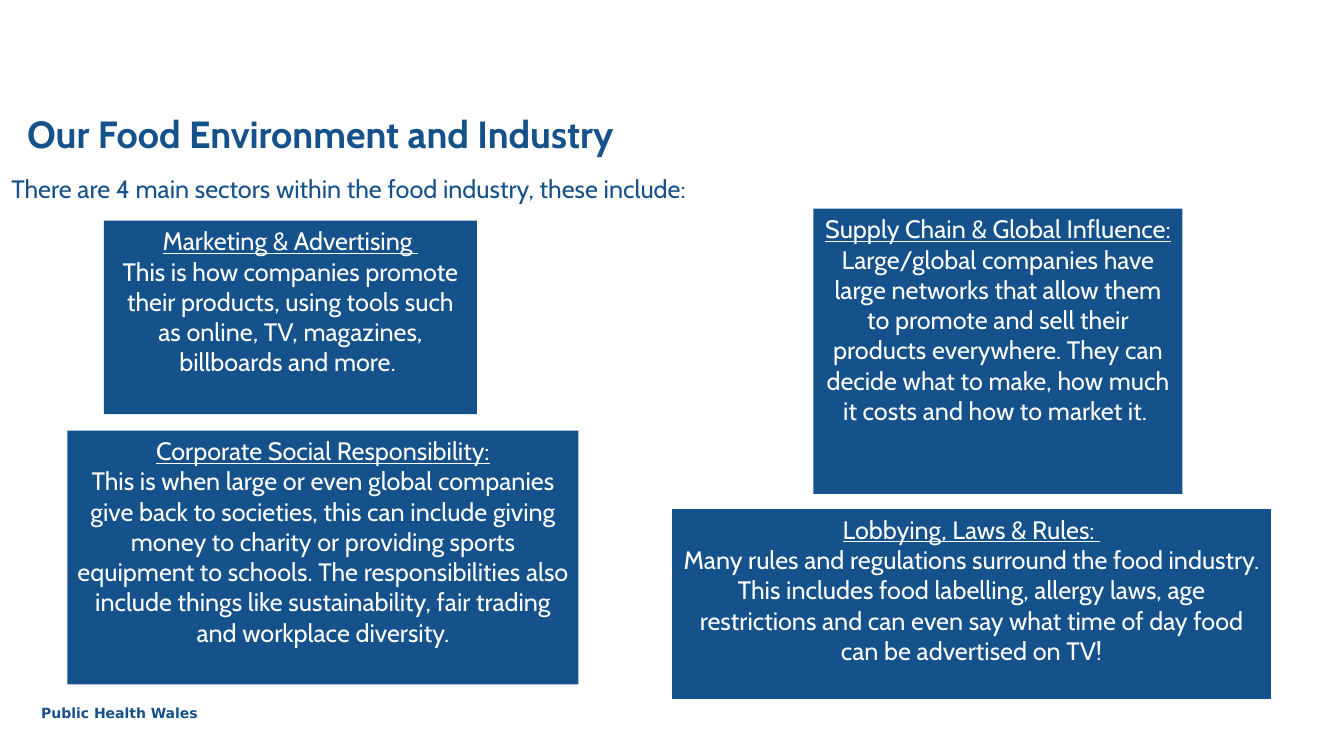
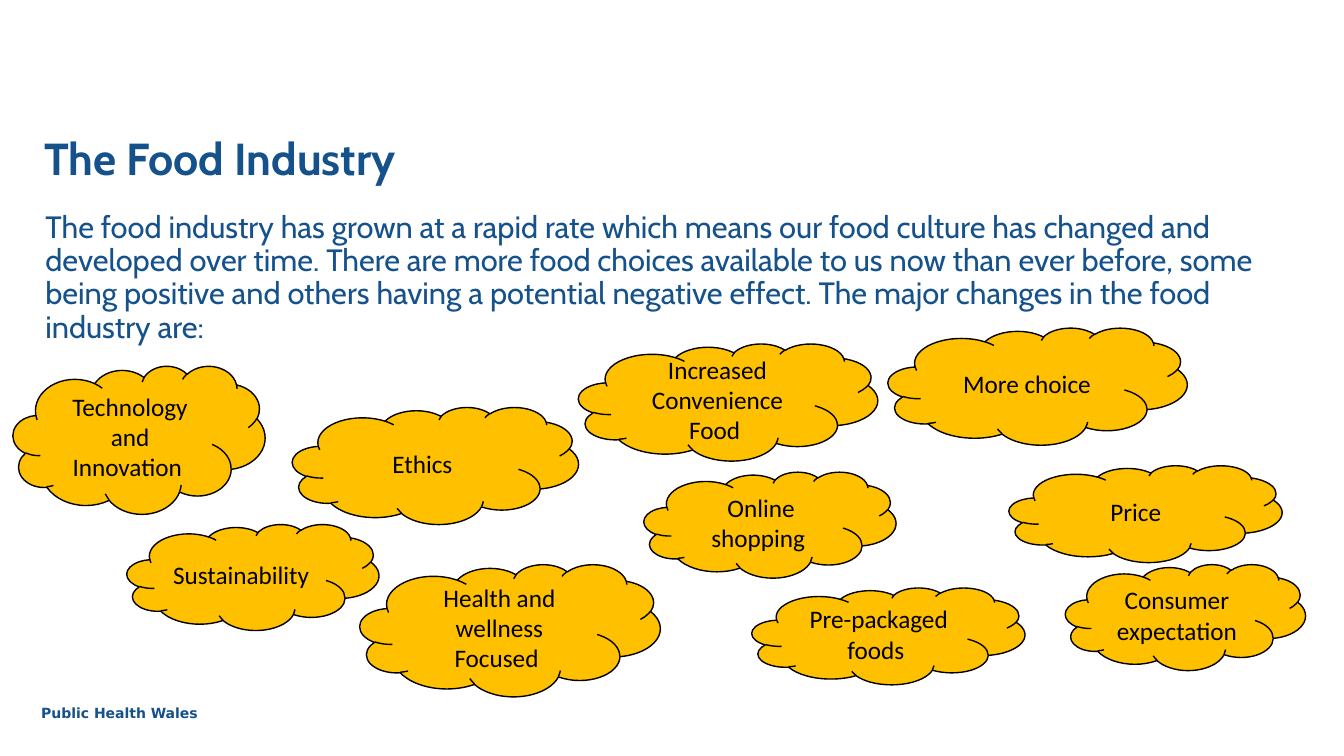
"""Build two slides about the food industry and its environment."""
from dataclasses import dataclass

import pptx
import pptx.dml.color
import pptx.enum.shapes
import pptx.enum.text
import pptx.oxml
import pptx.oxml.ns
import pptx.util
from pptx.util import Cm

COLOURS = {"blue": "15518B", "amber": "FFC000", "white": "FFFFFF", "black": "000000"}
HEADING_FONT = "Cabin"
CLOUD_FONT = "Calibri"
FOOTER_FONT = "DejaVu Sans"
ALIGN = pptx.enum.text.PP_ALIGN
ANCHOR = pptx.enum.text.MSO_ANCHOR
SHAPES = pptx.enum.shapes.MSO_SHAPE


@dataclass(frozen=True)
class Area:
    left: float
    top: float
    width: float
    height: float

    def lengths(self) -> tuple:
        return Cm(self.left), Cm(self.top), Cm(self.width), Cm(self.height)


@dataclass(frozen=True)
class Sector:
    area: Area
    heading: str
    detail: str


@dataclass(frozen=True)
class Change:
    area: Area
    label: str


FOOTER_AREA = Area(0.79, 17.63, 4.6, 0.69)

SECTORS = [
    Sector(Area(2.62, 5.56, 9.4, 4.88), "Marketing & Advertising ",
           "This is how companies promote their products, using tools such as online, TV, "
           "magazines, billboards and more. "),
    Sector(Area(20.5, 5.26, 9.3, 7.19), "Supply Chain & Global Influence: ",
           "Large/global companies have large networks that allow them to promote and sell "
           "their products everywhere. They can decide what to make, how much it costs and "
           "how to market it. "),
    Sector(Area(1.7, 10.85, 12.88, 6.4), "Corporate Social Responsibility:",
           "This is when large or even global companies give back to societies, this can "
           "include giving money to charity or providing sports equipment to schools. The "
           "responsibilities also include things like sustainability, fair trading and "
           "workplace diversity."),
    Sector(Area(16.94, 12.83, 15.09, 4.78), "Lobbying, Laws & Rules: ",
           "Many rules and regulations surround the food industry. This includes food "
           "labelling, allergy laws, age restrictions and can even say what time of day "
           "food can be advertised on TV!"),
]

CHANGES = [
    Change(Area(14.58, 8.66, 7.54, 2.95), "Increased Convenience Food "),
    Change(Area(9.07, 14.22, 7.57, 3.33), "Health and wellness Focused "),
    Change(Area(0.33, 9.22, 6.35, 3.73), "Technology and Innovation "),
    Change(Area(3.2, 13.21, 6.35, 2.67), "Sustainability "),
    Change(Area(7.37, 10.26, 7.21, 2.95), "Ethics "),
    Change(Area(16.23, 11.89, 6.35, 2.67), "Online shopping "),
    Change(Area(22.38, 8.26, 7.54, 2.95), "More choice"),
    Change(Area(18.95, 14.81, 6.88, 2.44), "Pre-packaged foods "),
    Change(Area(25.43, 11.73, 6.88, 2.44), "Price"),
    Change(Area(26.85, 14.22, 6.05, 2.67), "Consumer expectation"),
]


def colour(name: str) -> pptx.dml.color.RGBColor:
    return pptx.dml.color.RGBColor.from_string(COLOURS[name])


def style(para, font: str, size: float, ink: str, bold: bool = False,
          align=ALIGN.LEFT, line_spacing: float = 1.0) -> None:
    para.alignment = align
    para.line_spacing = line_spacing
    para.space_before = pptx.util.Pt(0)
    para.font.name = font
    para.font.size = pptx.util.Pt(size)
    para.font.bold = bold
    para.font.color.rgb = colour(ink)


def fill_placeholder(box, area: Area, text: str, size: float, bold: bool = False,
                     line_spacing: float = 0.9) -> None:
    box.left, box.top, box.width, box.height = area.lengths()
    frame = box.text_frame
    frame.text = text
    frame.word_wrap = True
    frame.auto_size = pptx.enum.text.MSO_AUTO_SIZE.NONE
    frame.vertical_anchor = ANCHOR.TOP
    para = frame.paragraphs[0]
    if not bold:
        properties = para._p.get_or_add_pPr()
        properties.set("marL", "0")
        properties.set("indent", "0")
        properties.append(pptx.oxml.parse_xml(
            f"<a:buNone {pptx.oxml.ns.nsdecls('a')}/>"))
    style(para, HEADING_FONT, size, "blue", bold, line_spacing=line_spacing)


def add_footer(page) -> None:
    box = page.shapes.add_textbox(*FOOTER_AREA.lengths())
    box.text_frame.word_wrap = True
    box.text_frame.text = "Public Health Wales"
    style(box.text_frame.paragraphs[0], FOOTER_FONT, 10, "blue", bold=True)


def add_page(deck, title: str, title_area: Area, title_size: float, lead: str,
             lead_area: Area, lead_size: float, lead_spacing: float):
    page = deck.slides.add_slide(deck.slide_layouts[1])
    fill_placeholder(page.shapes.title, title_area, title, title_size, bold=True)
    fill_placeholder(page.placeholders[1], lead_area, lead, lead_size,
                     line_spacing=lead_spacing)
    add_footer(page)
    return page


def add_filled_shape(page, kind, area: Area, fill: str):
    box = page.shapes.add_shape(kind, *area.lengths())
    box.shadow.inherit = False
    box.fill.solid()
    box.fill.fore_color.rgb = colour(fill)
    box.text_frame.word_wrap = True
    return box


def add_sector(page, sector: Sector) -> None:
    box = add_filled_shape(page, SHAPES.RECTANGLE, sector.area, "blue")
    box.line.fill.background()
    frame = box.text_frame
    frame.vertical_anchor = ANCHOR.TOP
    frame.text = f"{sector.heading}\n{sector.detail}"
    for para in frame.paragraphs:
        style(para, HEADING_FONT, 18, "white", align=ALIGN.CENTER)
    frame.paragraphs[0].font.underline = True


def add_change(page, change: Change) -> None:
    box = add_filled_shape(page, SHAPES.CLOUD, change.area, "amber")
    box.line.color.rgb = colour("black")
    box.line.width = pptx.util.Pt(1)
    box.text_frame.vertical_anchor = ANCHOR.MIDDLE
    box.text_frame.text = change.label
    style(box.text_frame.paragraphs[0], CLOUD_FONT, 18, "black", align=ALIGN.CENTER)


def main() -> None:
    deck = pptx.Presentation()
    deck.slide_width, deck.slide_height = Cm(33.87), Cm(19.05)

    sectors_page = add_page(
        deck, "Our Food Environment and Industry", Area(0.43, 2.79, 17.17, 2.9), 27,
        "There are 4 main sectors within the food industry, these include:",
        Area(0.03, 4.24, 19.58, 1.02), 18, 1.0)
    for sector in SECTORS:
        add_sector(sectors_page, sector)

    changes_page = add_page(
        deck, "The Food Industry", Area(0.86, 3.33, 12.32, 1.85), 32,
        "The food industry has grown at a rapid rate which means our food culture has "
        "changed and developed over time. There are more food choices available to us now "
        "than ever before, some being positive and others having a potential negative "
        "effect. The major changes in the food industry are:",
        Area(0.89, 5.21, 31.55, 3.71), 22, 0.9)
    for change in CHANGES:
        add_change(changes_page, change)

    deck.save("out.pptx")


if __name__ == "__main__":
    main()
